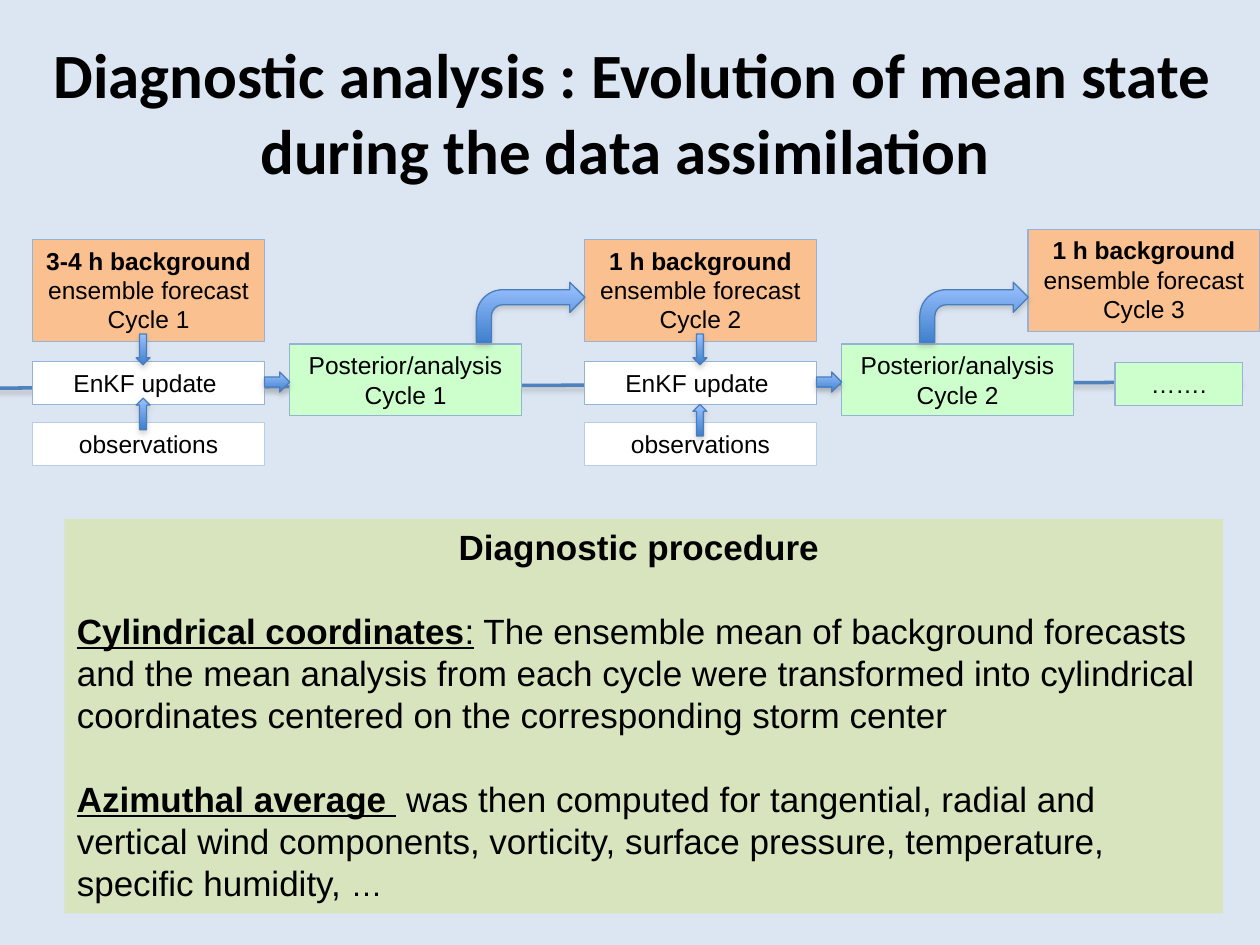
from dataclasses import dataclass

from lxml import etree
from pptx import Presentation
from pptx.dml.color import RGBColor
from pptx.enum.shapes import MSO_CONNECTOR, MSO_SHAPE
from pptx.enum.text import MSO_ANCHOR, MSO_AUTO_SIZE, PP_ALIGN
from pptx.oxml.ns import qn
from pptx.util import Pt

RECTANGLE = MSO_SHAPE.RECTANGLE
BENT, RIGHT = MSO_SHAPE.BENT_ARROW, MSO_SHAPE.RIGHT_ARROW
DOWN, UP = MSO_SHAPE.DOWN_ARROW, MSO_SHAPE.UP_ARROW
STRAIGHT = MSO_CONNECTOR.STRAIGHT
TOP, MIDDLE = MSO_ANCHOR.TOP, MSO_ANCHOR.MIDDLE
NO_FIT = MSO_AUTO_SIZE.NONE
CENTER, LEFT = PP_ALIGN.CENTER, PP_ALIGN.LEFT
TITLE_ONLY = 5


@dataclass(frozen=True)
class Theme:
    """Colours, fonts and type sizes of the slide."""
    page: str = "DCE6F2"
    ink: str = "000000"
    forecast: str = "FAC090"
    step: str = "FFFFFF"
    analysis: str = "CCFFCC"
    panel: str = "D7E4BD"
    edge: str = "95B3D7"
    soft_edge: str = "B9CDE5"
    arrow_top: str = "9BC1FF"
    arrow_bottom: str = "3F80CD"
    arrow_edge: str = "4A7EBB"
    timeline: str = "4F81BD"
    shadow: str = "808080"
    title_font: str = "Calibri"
    body_font: str = "Arial"
    title_size: int = 36
    panel_size: int = 20
    ellipsis_size: int = 18
    box_size: int = 14


THEME = Theme()
BOX_WIDTH = 132.4


def rgb(value):
    """Turn a hex string into a colour."""
    return RGBColor.from_string(value)


def set_font(font, name, size):
    """Give a font its face, size and the ink colour."""
    font.name, font.size = name, Pt(size)
    font.color.rgb = rgb(THEME.ink)


def add_shadow(shape, opacity, distance):
    """Add a soft shadow falling straight down."""
    properties = shape._element.spPr
    effects = etree.SubElement(properties, qn("a:effectLst"))
    shadow = etree.SubElement(effects, qn("a:outerShdw"), blurRad=str(Pt(3)),
                              dist=str(Pt(distance)), dir="5400000", rotWithShape="0")
    color = etree.SubElement(shadow, qn("a:srgbClr"), val=THEME.shadow)
    etree.SubElement(color, qn("a:alpha"), val=str(opacity * 1000))


def add_box(page, place, fill, edge, paragraphs, size=THEME.box_size):
    """Add a filled rectangle; each paragraph is a list of (text, styles) spans."""
    box = page.shapes.add_shape(RECTANGLE, *map(Pt, place))
    box.shadow.inherit = False
    box.fill.solid()
    box.fill.fore_color.rgb = rgb(fill)
    if edge:
        box.line.color.rgb = rgb(edge)
        box.line.width = Pt(0.75)
    else:
        box.line.fill.background()
    frame = box.text_frame
    frame.word_wrap, frame.vertical_anchor = True, TOP
    for index, spans in enumerate(paragraphs):
        para = frame.add_paragraph() if index else frame.paragraphs[0]
        para.alignment = CENTER
        set_font(para.font, THEME.body_font, size)
        for text, styles in spans:
            span = para.add_run()
            span.text = text
            set_font(span.font, THEME.body_font, size)
            span.font.bold = "b" in styles
            span.font.underline = "u" in styles
    return box


def add_forecast(page, left, top, lead, cycle):
    """Add the background forecast box of one cycle."""
    add_box(page, (left, top, BOX_WIDTH, 58.3), THEME.forecast, THEME.edge,
            [[(f"{lead} h background ", "b"), ("ensemble forecast", "")],
             [(f"Cycle {cycle}", "")]])


def add_cycle(page, left, lead, cycle):
    """Add the four boxes of one assimilation cycle."""
    add_forecast(page, left, 136.8, lead, cycle)
    for top, edge, label in ((241.5, THEME.soft_edge, "observations"),
                             (206.6, THEME.edge, "EnKF update ")):
        add_box(page, (left, top, BOX_WIDTH, 24.4), THEME.step, edge, [[(label, "")]])
    add_box(page, (left + 146.9, 196.6, BOX_WIDTH, 41), THEME.analysis, THEME.edge,
            [[("Posterior/analysis", "")], [(f"Cycle {cycle}", "")]])


def add_arrow(page, kind, *place):
    """Add a block arrow with a vertical gradient."""
    arrow = page.shapes.add_shape(kind, *map(Pt, place))
    arrow.fill.gradient()
    arrow.fill.gradient_angle = 270
    for stop, color, position in zip(arrow.fill.gradient_stops,
                                     (THEME.arrow_top, THEME.arrow_bottom), (0, 1)):
        stop.color.rgb = rgb(color)
        stop.position = position
    arrow.line.color.rgb = rgb(THEME.arrow_edge)
    arrow.line.width = Pt(0.75)
    add_shadow(arrow, 35, 1.8)


def add_title(page, text):
    """Fill and place the title placeholder."""
    title = page.shapes.title
    title.left, title.top, title.width, title.height = map(Pt, (19.4, 6.5, 684, 114.5))
    frame = title.text_frame
    frame.text = text
    frame.word_wrap, frame.auto_size, frame.vertical_anchor = True, NO_FIT, MIDDLE
    para = frame.paragraphs[0]
    para.alignment = CENTER
    set_font(para.font, THEME.title_font, THEME.title_size)
    para.font.bold = True


def add_timeline(page):
    """Add the arrow that runs behind the cycles."""
    line = page.shapes.add_connector(STRAIGHT, *map(Pt, (-2, 221.8, 710, 218.2)))
    line.line.color.rgb = rgb(THEME.timeline)
    line.line.width = Pt(2)
    etree.SubElement(line.line._get_or_add_ln(), qn("a:tailEnd"), type="arrow")
    add_shadow(line, 38, 1.6)


def add_procedure(page):
    """Add the panel that explains the diagnostic procedure."""
    panel = add_box(page, (36.8, 296.6, 662.2, 225.4), THEME.panel, None, [
        [("Diagnostic procedure ", "b")],
        [("Cylindrical coordinates", "bu"), (":", "u"),
         (" The ensemble mean of background forecasts and the mean analysis from each "
          "cycle were transformed into cylindrical coordinates centered on the "
          "corresponding storm center", "")],
        [("Azimuthal average ", "bu"),
         (" was then computed for tangential, radial and vertical wind components, "
          "vorticity, surface pressure, temperature, specific humidity, ", ""),
         ("…", "")]], THEME.panel_size)
    details = panel.text_frame.paragraphs[1:]
    for para in details:
        para.alignment = LEFT
        para.space_before = Pt(24)
    details[-1].runs[-1].font.size = Pt(THEME.ellipsis_size)


def main():
    """Build the slide and save it."""
    deck = Presentation()
    deck.slide_width, deck.slide_height = Pt(720), Pt(540)
    page = deck.slides.add_slide(deck.slide_layouts[TITLE_ONLY])
    page.background.fill.solid()
    page.background.fill.fore_color.rgb = rgb(THEME.page)

    add_title(page, "Diagnostic analysis : Evolution of mean state "
                    "during the data assimilation ")
    add_timeline(page)
    add_cycle(page, 18.7, "3-4", 1)
    add_cycle(page, 334.1, "1", 2)
    add_forecast(page, 587.5, 131, "1", 3)
    for left in (272.2, 525.6):
        add_arrow(page, BENT, left, 161.3, 62, 34.4)
    for left in (151.2, 466.6):
        add_arrow(page, RIGHT, left, 212.6, 14.4, 11.5)
    for left, up_top in ((77.8, 227.5), (396, 231.1)):
        add_arrow(page, DOWN, left, 190.8, 7.9, 17.6)
        add_arrow(page, UP, left, up_top, 7.9, 18)
    add_procedure(page)
    add_box(page, (637.2, 207.2, 72.7, 24.4), THEME.analysis, THEME.edge,
            [[("…….", "")]])
    deck.save("out.pptx")


if __name__ == "__main__":
    main()
